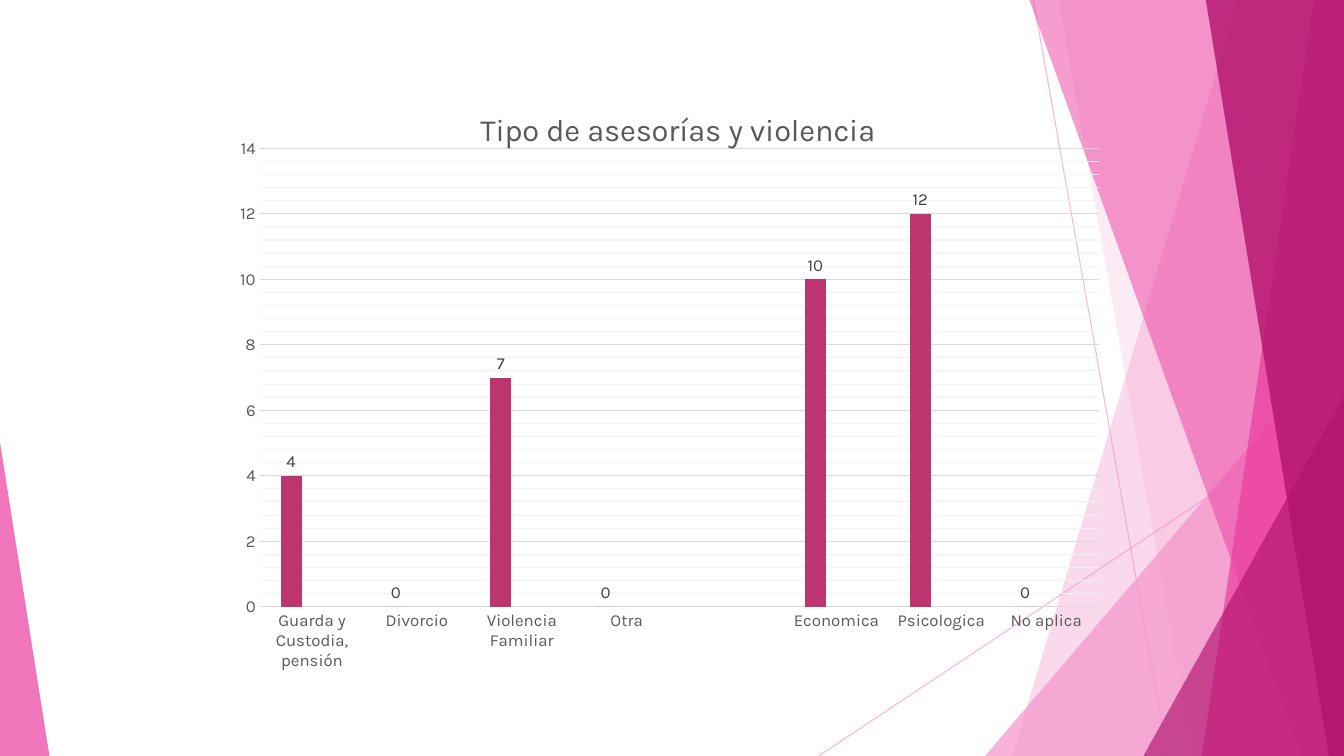
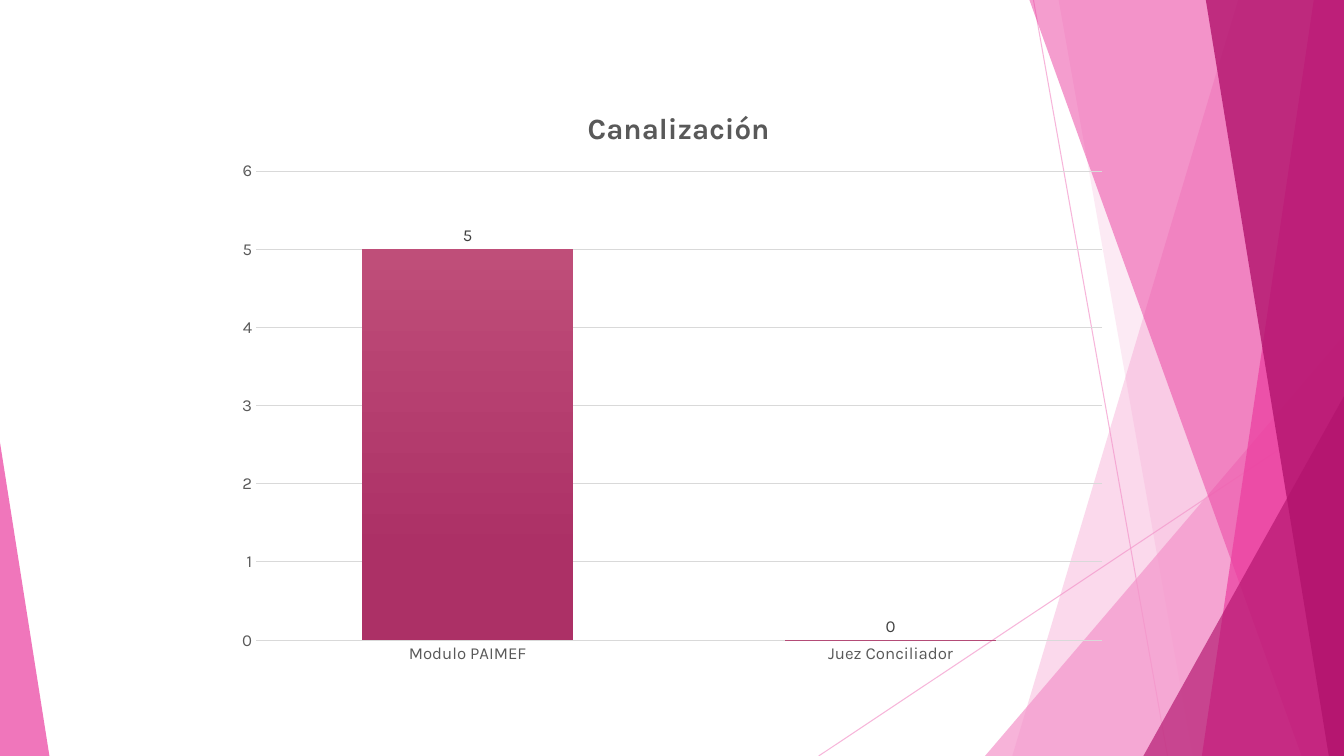
from lxml import etree
from pptx import Presentation
from pptx.chart.data import CategoryChartData
from pptx.dml.color import RGBColor
from pptx.enum.chart import XL_CHART_TYPE, XL_LABEL_POSITION, XL_TICK_MARK
from pptx.enum.shapes import MSO_CONNECTOR, MSO_SHAPE
from pptx.oxml import parse_xml
from pptx.oxml.ns import nsdecls, qn
from pptx.util import Inches, Pt

WIDTH, HEIGHT = 13.33, 7.5
FONT = "Karla"
PALE, PINK, DEEP = "F496CB", "EB3D9F", "B2136D"
TEXT, LABEL, GRID, MINOR_GRID = "595959", "404040", "D9D9D9", "F2F2F2"
CHART_BOX = (2.22, 0.79, 8.89, 5.93)


def rgb(value):
    return RGBColor.from_string(value)


def set_alpha(fill, percent):
    """Make the solid colour in a fill or line partly transparent."""
    color = next(fill.iter(qn("a:srgbClr")))
    etree.SubElement(color, qn("a:alpha")).set("val", str(percent * 1000))


def manual_layout(x, y, w=None, h=None):
    size = "" if w is None else f'<c:w val="{w}"/><c:h val="{h}"/>'
    target = "" if w is None else '<c:layoutTarget val="inner"/>'
    return parse_xml(
        f'<c:layout {nsdecls("c")}><c:manualLayout>{target}'
        '<c:xMode val="edge"/><c:yMode val="edge"/>'
        f'<c:x val="{x}"/><c:y val="{y}"/>{size}</c:manualLayout></c:layout>')


class Deck:
    def __init__(self):
        self.prs = Presentation()
        self.prs.slide_width = Inches(WIDTH)
        self.prs.slide_height = Inches(HEIGHT)
        self.layout = self.prs.slide_layouts[6]
        self.slide = None

    def new_slide(self):
        self.slide = self.prs.slides.add_slide(self.layout)

    def ray(self, x1, y1, x2, y2):
        line = self.slide.shapes.add_connector(
            MSO_CONNECTOR.STRAIGHT, *map(Inches, (x1, y1, x2, y2)))
        line.line.color.rgb = rgb(PALE)
        line.line.width = Pt(0.75)
        sp_pr = line.element.spPr
        set_alpha(sp_pr, 70)
        etree.SubElement(sp_pr, qn("a:effectLst"))

    def paint(self, sp, color, alpha):
        sp.shadow.inherit = False
        sp.fill.solid()
        sp.fill.fore_color.rgb = rgb(color)
        sp.line.fill.background()
        set_alpha(sp.element.spPr, alpha)

    def band(self, top_x, bottom_x, color, alpha):
        """Facet from a slanted left edge to the right slide edge."""
        builder = self.slide.shapes.build_freeform(Inches(top_x), 0)
        corners = ((WIDTH, 0), (WIDTH, HEIGHT), (bottom_x, HEIGHT))
        builder.add_line_segments([(Inches(x), Inches(y)) for x, y in corners])
        self.paint(builder.convert_to_shape(), color, alpha)

    def corner(self, x, y, w, apex, color, alpha):
        """Right triangle standing on the bottom slide edge."""
        sp = self.slide.shapes.add_shape(
            MSO_SHAPE.ISOSCELES_TRIANGLE, *map(Inches, (x, y, w, HEIGHT - y)))
        sp.adjustments[0] = apex
        self.paint(sp, color, alpha)

    def facets_to_layout(self):
        """Draw the facets once and hand them to the shared layout."""
        for holder in list(self.layout.placeholders):
            self.layout.shapes.element.remove(holder.element)
        self.ray(10.25, 0, 11.58, HEIGHT)
        self.ray(WIDTH, 4.03, 8.12, HEIGHT)
        self.band(12.28, 10.04, PALE, 36)
        self.band(10.5, 11.83, PALE, 20)
        self.corner(9.77, 3.33, 3.56, 1, PALE, 72)
        self.band(10.21, 12.91, PINK, 50)
        self.band(13.03, 11.92, PINK, 70)
        self.band(11.96, 13.18, DEEP, 80)
        self.corner(11.34, 3.93, 1.99, 1, DEEP, 66)
        self.corner(0, 4.39, 0.49, 0, PINK, 70)
        for sp in list(self.slide.shapes):
            self.layout.shapes.element.append(sp.element)

    def font(self, font, size, color, bold=False):
        font.name, font.size, font.bold = FONT, Pt(size), bold
        font.color.rgb = rgb(color)

    def minor_grid(self, axis, unit):
        axis.minor_unit = unit
        axis.has_minor_gridlines = True
        grid = next(axis._element.iter(qn("c:minorGridlines")))
        grid.append(parse_xml(
            f'<c:spPr {nsdecls("c", "a")}><a:ln w="{Pt(0.75)}"><a:solidFill>'
            f'<a:srgbClr val="{MINOR_GRID}"/></a:solidFill></a:ln></c:spPr>'))

    def column_chart(self, title, title_at, title_size, bold, cats, series,
                     plot, gap, overlap, top, step):
        data = CategoryChartData()
        data.categories = cats
        for number, (values, _) in enumerate(series, 1):
            data.add_series(f"Series {number}", values)
        chart = self.slide.shapes.add_chart(
            XL_CHART_TYPE.COLUMN_CLUSTERED, *map(Inches, CHART_BOX), data).chart
        self.font(chart.font, 10, "000000")
        chart.has_legend = False

        # Title
        chart.has_title = True
        tf = chart.chart_title.text_frame
        tf.text = title
        self.font(tf.paragraphs[0].runs[0].font, title_size, TEXT, bold)
        chart_title = chart.chart_title._element
        for old in chart_title.findall(qn("c:layout")):
            chart_title.remove(old)
        chart_title.find(qn("c:tx")).addnext(manual_layout(*title_at))

        # Axes and plot area
        for axis in (chart.category_axis, chart.value_axis):
            axis.major_tick_mark = axis.minor_tick_mark = XL_TICK_MARK.NONE
            self.font(axis.tick_labels.font, 12, TEXT)
        chart.category_axis.format.line.color.rgb = rgb(GRID)
        chart.category_axis.format.line.width = Pt(0.75)
        axis = chart.value_axis
        axis.format.line.fill.background()
        axis.minimum_scale, axis.maximum_scale, axis.major_unit = 0, top, step
        axis.has_major_gridlines = True
        axis.major_gridlines.format.line.color.rgb = rgb(GRID)
        axis.major_gridlines.format.line.width = Pt(0.75)
        area = chart.plots[0]._element.getparent()
        for old in area.findall(qn("c:layout")):
            area.remove(old)
        area.insert(0, manual_layout(*plot))

        # Columns and value labels
        columns = chart.plots[0]
        columns.gap_width, columns.overlap = gap, overlap
        columns.vary_by_categories = False
        columns.has_data_labels = True
        labels = columns.data_labels
        labels.show_value = True
        labels.position = XL_LABEL_POSITION.OUTSIDE_END
        self.font(labels.font, 12, LABEL)
        for bars, (_, colors) in zip(columns.series, series):
            fill = bars.format.fill
            if len(colors) == 1:
                fill.solid()
                fill.fore_color.rgb = rgb(colors[0])
                continue
            fill.gradient()
            fill.gradient_angle = 270
            for stop, color, place in zip(fill.gradient_stops, colors, (0, 0.78)):
                stop.color.rgb = rgb(color)
                stop.position = place
        return chart


def main():
    deck = Deck()

    # Types of advice and violence
    deck.new_slide()
    deck.facets_to_layout()
    cats = ["Guarda y Custodia, pensión", "Divorcio", "Violencia Familiar",
            "Otra", "", "Economica", "Psicologica", "No aplica"]
    empty = [None] * len(cats)
    chart = deck.column_chart(
        "Tipo de asesorías y violencia", (0.28, 0.04), 22, False, cats,
        [([4, 0, 7, 0, None, 10, 12, 0], ["BC356F"]),
         (empty, ["F27E19"]), (empty, ["BC80E0"])],
        plot=(0.04, 0.115, 0.936, 0.767), gap=199, overlap=0, top=14, step=2)
    deck.minor_grid(chart.value_axis, 0.4)

    # Referrals
    deck.new_slide()
    deck.column_chart(
        "Canalización", (0.4, 0.04), 21, True,
        ["Modulo PAIMEF", "Juez Conciliador"], [([5, 0], ["BF4E79", "AC3066"])],
        plot=(0.036, 0.153, 0.944, 0.785), gap=100, overlap=-24, top=6, step=1)

    deck.prs.save("out.pptx")


if __name__ == "__main__":
    main()
